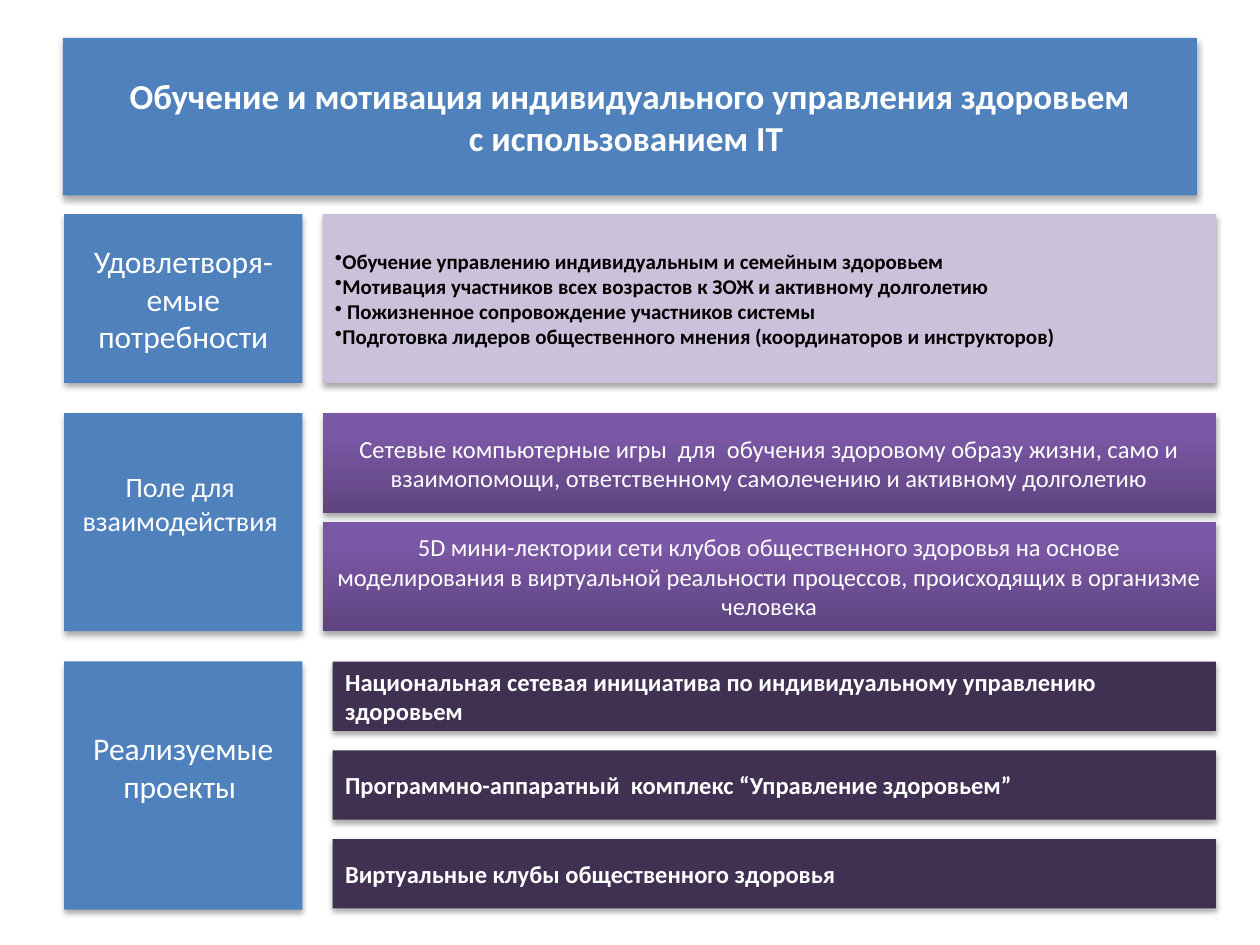
import copy

import pptx
import pptx.dml.color
import pptx.enum.shapes
import pptx.enum.text
import pptx.oxml
import pptx.oxml.ns
import pptx.util

Inches = pptx.util.Inches
Pt = pptx.util.Pt
RGBColor = pptx.dml.color.RGBColor
LEFT = pptx.enum.text.PP_ALIGN.LEFT
CENTER = pptx.enum.text.PP_ALIGN.CENTER

BLUE = RGBColor(0x4F, 0x81, 0xBD)
LAVENDER = RGBColor(0xCC, 0xC1, 0xDA)
PLUM = RGBColor(0x40, 0x31, 0x52)
WHITE = RGBColor(0xFF, 0xFF, 0xFF)
BLACK = RGBColor(0x00, 0x00, 0x00)
GRADIENT = [
    (0, RGBColor(0x5F, 0x44, 0x80)),
    (0.8, RGBColor(0x7B, 0x58, 0xA6)),
    (1, RGBColor(0x7C, 0x57, 0xA8)),
]
HEADING_SHADOW = (32, 3.5, 2.2)
CONTENT_SHADOW = (35, 3.1, 1.8)


def add_box(left, top, width, height, color, shadow):
    shape = slide.shapes.add_shape(
        pptx.enum.shapes.MSO_SHAPE.RECTANGLE,
        Inches(left), Inches(top), Inches(width), Inches(height))
    shape.line.fill.background()
    if color is None:
        shape.fill.gradient()
        shape.fill.gradient_angle = 90
        stop_list = shape._element.spPr.find(".//" + pptx.oxml.ns.qn("a:gsLst"))
        stop_list.append(copy.deepcopy(stop_list[-1]))
        for stop, (position, stop_color) in zip(shape.fill.gradient_stops, GRADIENT):
            stop.position = position
            stop.color.rgb = stop_color
    else:
        shape.fill.solid()
        shape.fill.fore_color.rgb = color
    shape.shadow.inherit = False
    opacity, blur, distance = shadow
    effects = shape._element.spPr.find(pptx.oxml.ns.qn("a:effectLst"))
    effects.append(pptx.oxml.parse_xml(
        f'<a:outerShdw {pptx.oxml.ns.nsdecls("a")} blurRad="{Pt(blur)}" '
        f'dist="{Pt(distance)}" dir="5400000" rotWithShape="0">'
        f'<a:srgbClr val="000000"><a:alpha val="{opacity * 1000}"/></a:srgbClr>'
        '</a:outerShdw>'))
    return shape


def add_text(shape, lines, size, color=WHITE, bold=False, align=CENTER, bullet=False):
    frame = shape.text_frame
    frame.word_wrap = True
    frame.vertical_anchor = pptx.enum.text.MSO_ANCHOR.MIDDLE
    for index, line in enumerate(lines):
        paragraph = frame.add_paragraph() if index else frame.paragraphs[0]
        paragraph.alignment = align
        if bullet:
            paragraph._p.get_or_add_pPr().append(pptx.oxml.parse_xml(
                f'<a:buChar {pptx.oxml.ns.nsdecls("a")} char="•"/>'))
        for part_index, part in enumerate(line.split("\n")):
            if part_index:
                paragraph.add_line_break()
            run = paragraph.add_run()
            run.text = part
            run.font.name = "Calibri"
            run.font.size = Pt(size)
            run.font.bold = bold
            run.font.color.rgb = color


presentation = pptx.Presentation()
presentation.slide_width = Inches(10)
presentation.slide_height = Inches(7.5)
slide = presentation.slides.add_slide(presentation.slide_layouts[6])

title = add_box(0.5, 0.3, 9, 1.25, BLUE, HEADING_SHADOW)
add_text(title, ["Обучение и мотивация индивидуального управления здоровьем\n"
                 "с использованием IT "], 20, bold=True)

headings = [
    (1.7, 1.34, 18, 0.05, ["Удовлетворя-емые потребности"]),
    (3.28, 1.73, 16, 0.35, ["Поле для ", "взаимодействия "]),
    (5.25, 1.97, 18, 0.35, ["Реализуемые проекты "]),
]
for top, height, size, bottom_margin, lines in headings:
    heading = add_box(0.51, top, 1.89, height, BLUE, HEADING_SHADOW)
    heading.text_frame.margin_bottom = Inches(bottom_margin)
    add_text(heading, lines, size)

fields = [
    (3.28, 0.79, "Сетевые компьютерные игры  для  обучения здоровому образу жизни, "
     "само и взаимопомощи, ответственному самолечению и активному долголетию"),
    (4.14, 0.87, "5D мини-лектории сети клубов общественного здоровья на основе "
     "моделирования в виртуальной реальности процессов, происходящих в организме человека"),
]
for top, height, text in fields:
    field = add_box(2.56, top, 7.09, height, None, CONTENT_SHADOW)
    add_text(field, [text], 14)

needs = add_box(2.56, 1.7, 7.09, 1.34, LAVENDER, CONTENT_SHADOW)
add_text(needs, [
    "Обучение управлению индивидуальным и семейным здоровьем",
    "Мотивация участников всех возрастов к ЗОЖ и активному долголетию",
    " Пожизненное сопровождение участников системы",
    "Подготовка лидеров общественного мнения (координаторов и инструкторов)",
], 12, BLACK, True, LEFT, True)

projects = [
    "Национальная сетевая инициатива по индивидуальному управлению здоровьем",
    "Программно-аппаратный  комплекс “Управление здоровьем”",
    "Виртуальные клубы общественного здоровья",
]
for index, text in enumerate(projects):
    project = add_box(2.64, 5.25 + index * 0.705, 7.01, 0.55, PLUM, CONTENT_SHADOW)
    add_text(project, [text], 14, bold=True, align=LEFT)

presentation.save("out.pptx")
